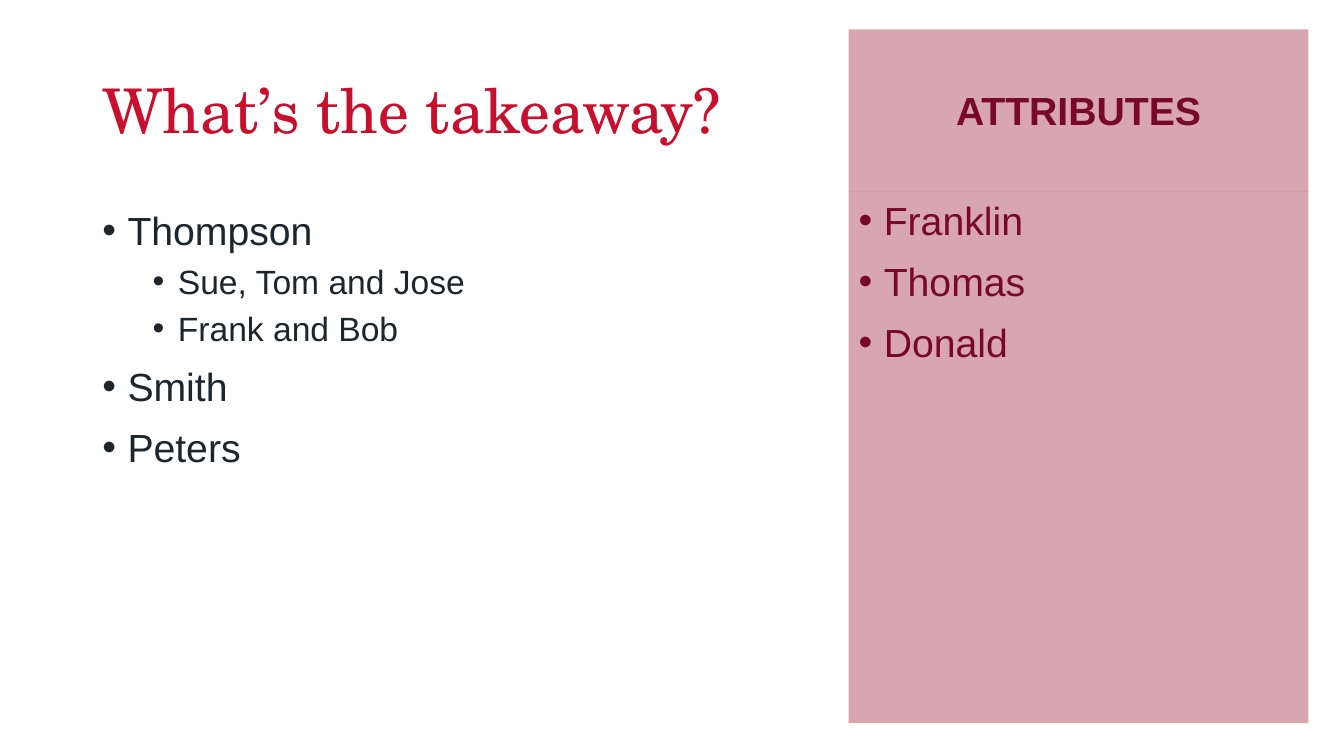
from pptx import Presentation
from pptx.dml.color import RGBColor
from pptx.enum.shapes import MSO_SHAPE
from pptx.enum.text import MSO_ANCHOR, PP_ALIGN
from pptx.oxml.ns import qn
from pptx.util import Pt
from lxml.etree import SubElement

RED = RGBColor(0xC8, 0x10, 0x2E)
INK = RGBColor(0x1D, 0x25, 0x2D)
MAROON = RGBColor(0x78, 0x08, 0x2A)
PANEL = RGBColor(0x9D, 0x22, 0x35)
PANEL_ALPHA = 40  # percent

SIZES = [28, 24]  # by bullet level
SPACES = [10, 5]
INDENTS = [18, 54]
HANGING = 18

TAKEAWAYS = [("Thompson", 0), ("Sue, Tom and Jose", 1), ("Frank and Bob", 1),
             ("Smith", 0), ("Peters", 0)]
ATTRIBUTES = [("Franklin", 0), ("Thomas", 0), ("Donald", 0)]


def set_font(para, name, size, color, bold=False):
    para.font.name = name
    para.font.size = Pt(size)
    para.font.color.rgb = color
    para.font.bold = bold


def add_text_box(page, left, top, width, height):
    box = page.shapes.add_textbox(Pt(left), Pt(top), Pt(width), Pt(height))
    box.text_frame.word_wrap = True
    return box.text_frame


def add_panel(page, left, top, width, height):
    """Translucent rectangle; returns its text frame."""
    panel = page.shapes.add_shape(MSO_SHAPE.RECTANGLE, Pt(left), Pt(top),
                                  Pt(width), Pt(height))
    panel.shadow.inherit = False
    panel.line.fill.background()
    panel.fill.solid()
    panel.fill.fore_color.rgb = PANEL
    color = panel.fill._xPr.find(".//" + qn("a:srgbClr"))
    SubElement(color, qn("a:alpha"), val=str(PANEL_ALPHA * 1000))
    panel.text_frame.word_wrap = True
    return panel.text_frame


def write_bullets(frame, items, color):
    frame.vertical_anchor = MSO_ANCHOR.TOP
    for index, (text, level) in enumerate(items):
        para = frame.add_paragraph() if index else frame.paragraphs[0]
        para.text = text
        para.level = level
        para.alignment = PP_ALIGN.LEFT
        para.space_before = Pt(SPACES[level])
        set_font(para, "Arial", SIZES[level], color)
        # Hanging bullet, placed before the default run properties
        props = para._p.get_or_add_pPr()
        props.set("marL", str(Pt(INDENTS[level])))
        props.set("indent", str(-Pt(HANGING)))
        defaults = props.find(qn("a:defRPr"))
        for tag, key, value in (("a:buFont", "typeface", "Arial"),
                                ("a:buChar", "char", "•")):
            defaults.addprevious(SubElement(props, qn(tag), {key: value}))


def add_takeaway(page, left, top, width, height):
    title_height = 104.4
    body_top = 115.2

    # Title
    title = add_text_box(page, left, top, width, title_height)
    title.vertical_anchor = MSO_ANCHOR.MIDDLE
    para = title.paragraphs[0]
    para.text = "What’s the takeaway?"
    para.line_spacing = 0.9
    set_font(para, "TeX Gyre Schola", 44, RED)

    # Bullet list
    body = add_text_box(page, left, top + body_top, width, height - body_top)
    write_bullets(body, TAKEAWAYS, INK)


def add_attributes(page, left, top, width, height):
    header_height = 115.5

    # List panel
    body = add_panel(page, left, top + header_height, width,
                     height - header_height)
    write_bullets(body, ATTRIBUTES, MAROON)

    # Header panel
    header = add_panel(page, left, top, width, header_height)
    header.vertical_anchor = MSO_ANCHOR.MIDDLE
    para = header.paragraphs[0]
    para.text = "ATTRIBUTES"
    para.alignment = PP_ALIGN.CENTER
    para.space_before = Pt(10)
    set_font(para, "Arial", 28, MAROON, bold=True)


def main():
    deck = Presentation()
    deck.slide_width, deck.slide_height = Pt(960), Pt(540)
    page = deck.slides.add_slide(deck.slide_layouts[6])
    add_takeaway(page, 66, 28.8, 476.64, 457.92)
    add_attributes(page, 606.24, 21, 328.32, 495.5)
    deck.save("out.pptx")


if __name__ == "__main__":
    main()
